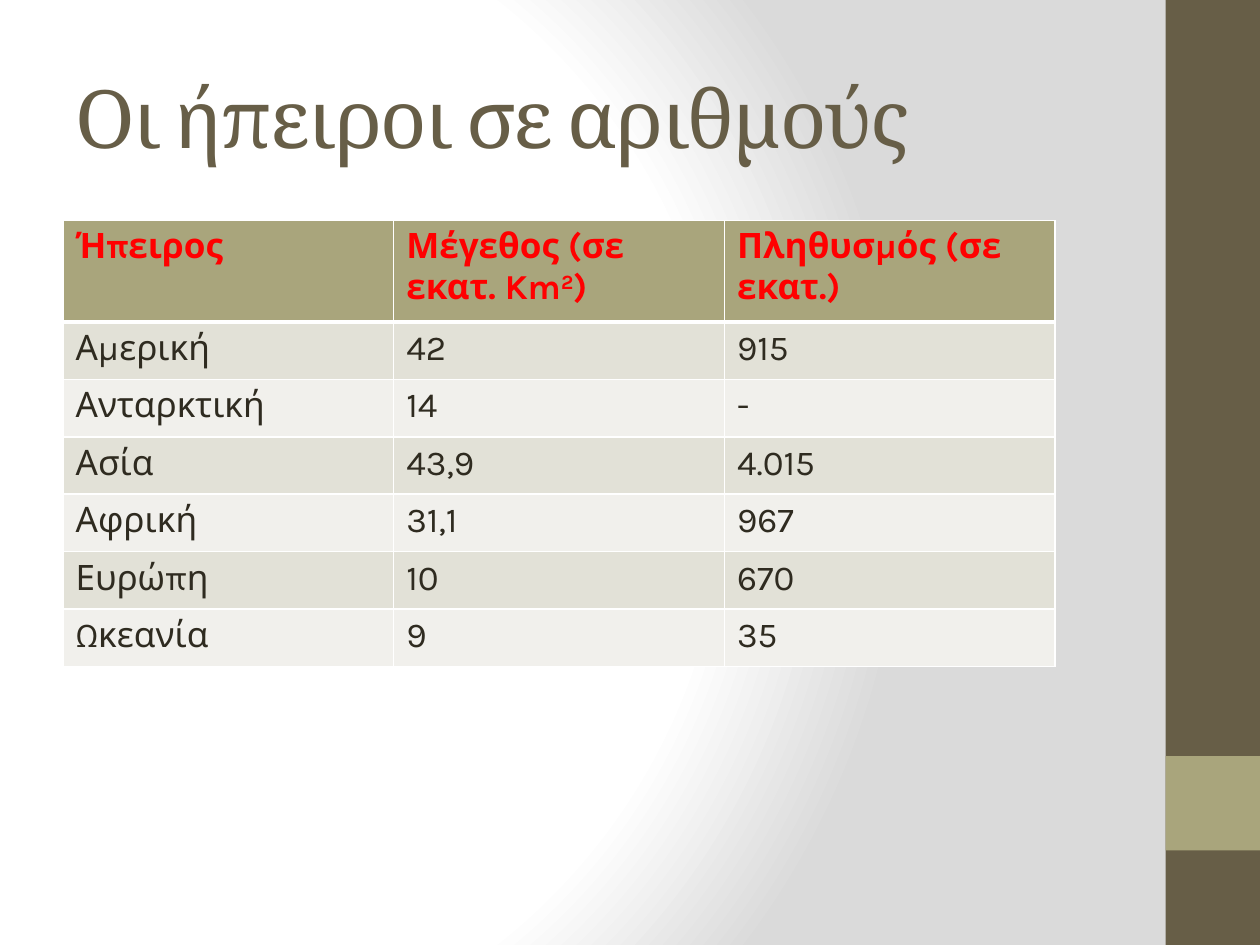
from lxml import etree
from pptx import Presentation
from pptx import util as u
from pptx.dml.color import RGBColor
from pptx.enum import shapes, text
from pptx.oxml import parse_xml
from pptx.oxml.ns import nsdecls, qn

OLIVE, SAGE, WHITE = "675E47", "A9A57C", "FFFFFF"
BANDS = ("E2E1D7", "F1F0EC")
HEADERS = (
    (("Ήπειρος", 0),),
    (("Μέγεθος (σε εκατ. Km", 0), ("2", 30), (")", 0)),
    (("Πληθυσμός (σε εκατ.)", 0),),
)
CONTINENTS = (
    ("Αμερική", "42", "915"),
    ("Ανταρκτική", "14", "-"),
    ("Ασία", "43,9", "4.015"),
    ("Αφρική", "31,1", "967"),
    ("Ευρώπη", "10", "670"),
    ("Ωκεανία", "9", "35"),
)
TITLE_FORMAT = {"name": "Cambria", "size": u.Pt(46)}
HEADER_FORMAT = {"name": "Karla", "size": u.Pt(20), "bold": True}
BODY_FORMAT = {"name": "Karla", "size": u.Pt(20), "bold": False}


def paint(color_format, color):
    """Give a fill or font colour format a hex colour."""
    color_format.rgb = RGBColor.from_string(color)


def fill_solid(item, color):
    """Fill a shape or cell with one colour."""
    item.fill.solid()
    paint(item.fill.fore_color, color)


def add_run(paragraph, words, formats, color):
    """Add a formatted run and return it."""
    run = paragraph.add_run()
    run.text = words
    for name, value in formats.items():
        setattr(run.font, name, value)
    paint(run.font.color, color)
    return run


def set_background(slide):
    """Lay a circular white-to-grey gradient behind the slide."""
    slide.background.fill.gradient()
    gradient = slide.element.find(".//" + qn("a:gradFill"))
    stops = "".join(
        f'<a:gs pos="{position * 1000}"><a:srgbClr val="{color}"/></a:gs>'
        for position, color in ((0, WHITE), (75, WHITE), (100, "DADADA"))
    )
    gradient.getparent().replace(gradient, parse_xml(
        f'<a:gradFill {nsdecls("a")} rotWithShape="1"><a:gsLst>{stops}</a:gsLst>'
        '<a:path path="circle"><a:fillToRect l="20000" t="50000" r="100000" b="50000"/>'
        "</a:path></a:gradFill>"
    ))


def add_sidebar(slide, left, top, width, height):
    """Draw the side band with its square accent."""
    accent_top = top + height * 0.8
    for y, size, color in ((top, height, OLIVE), (accent_top, width, SAGE)):
        shape = slide.shapes.add_shape(
            shapes.MSO_SHAPE.RECTANGLE, u.Pt(left), u.Pt(y), u.Pt(width), u.Pt(size))
        shape.shadow.inherit = False
        fill_solid(shape, color)
        shape.line.fill.background()


def add_title(slide, left, top, width, height):
    """Write the slide title."""
    box = slide.shapes.add_textbox(u.Pt(left), u.Pt(top), u.Pt(width), u.Pt(height))
    frame = box.text_frame
    frame.word_wrap = True
    frame.vertical_anchor = text.MSO_ANCHOR.MIDDLE
    run = add_run(frame.paragraphs[0], "Οι ήπειροι σε αριθμούς", TITLE_FORMAT, OLIVE)
    run.font._element.set("spc", "-100")


def style_cell(cell, color, bottom):
    """Set the white borders and the fill of a cell."""
    properties = cell._tc.get_or_add_tcPr()
    for side, width in (("L", 1), ("R", 1), ("T", 1), ("B", bottom)):
        line = etree.SubElement(properties, qn(f"a:ln{side}"), w=str(u.Pt(width)))
        solid = etree.SubElement(line, qn("a:solidFill"))
        etree.SubElement(solid, qn("a:srgbClr"), val=WHITE)
    fill_solid(cell, color)


def add_continent_table(slide, left, top, width, header_height, row_height):
    """Build the table of continents by size and population."""
    table = slide.shapes.add_table(
        len(CONTINENTS) + 1, len(HEADERS), u.Pt(left), u.Pt(top), u.Pt(width),
        u.Pt(header_height + row_height * len(CONTINENTS))).table
    for column in table.columns:
        column.width = u.Pt(width / len(HEADERS))
    for index, row in enumerate(table.rows):
        row.height = u.Pt(row_height if index else header_height)
    for column, pieces in enumerate(HEADERS):
        cell = table.cell(0, column)
        style_cell(cell, SAGE, 3)
        for words, baseline in pieces:
            run = add_run(cell.text_frame.paragraphs[0], words, HEADER_FORMAT, "FF0000")
            if baseline:
                run.font._element.set("baseline", str(baseline * 1000))
    for index, values in enumerate(CONTINENTS):
        for column, value in enumerate(values):
            cell = table.cell(index + 1, column)
            style_cell(cell, BANDS[index % 2], 1)
            add_run(cell.text_frame.paragraphs[0], value, BODY_FORMAT, "2F2B20")


def main():
    """Build and save the presentation."""
    presentation = Presentation()
    presentation.slide_width, presentation.slide_height = u.Pt(720), u.Pt(540)
    slide = presentation.slides.add_slide(presentation.slide_layouts[6])
    set_background(slide)
    add_sidebar(slide, 666, 0, 54, 540)
    add_title(slide, 36, 21.6, 600, 90)
    add_continent_table(slide, 36, 126, 567, 58, 32.8)
    presentation.save("out.pptx")


if __name__ == "__main__":
    main()
